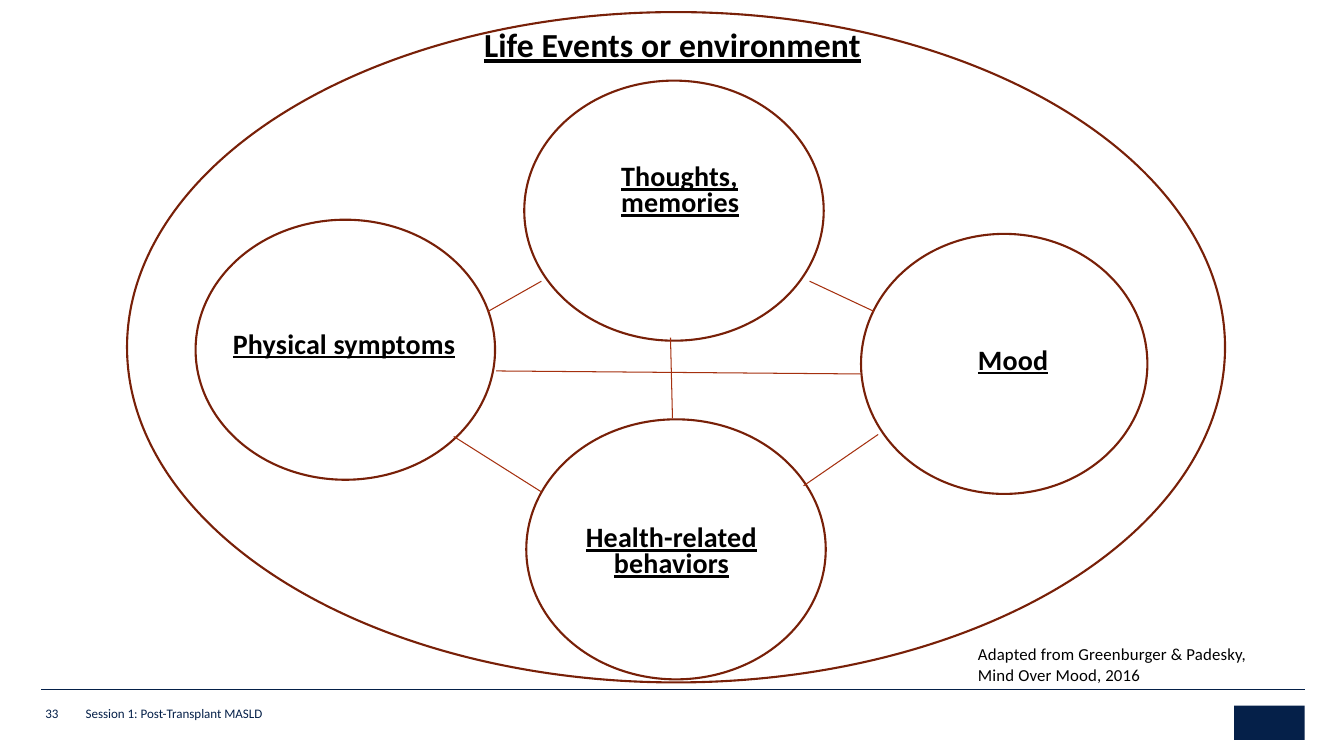
from pptx import Presentation
from pptx import util as u
from pptx.dml.color import RGBColor
from pptx.enum import shapes, text
from pptx.oxml.ns import qn
from lxml import etree

PX = 9144
COLORS = {"navy": "052049", "ring": "782008", "link": "A5300F", "ink": "000000"}
HEADING = {"size": u.Pt(20), "bold": True, "underline": True}
TITLE = {**HEADING, "size": u.Pt(24)}
SOURCE = {"size": u.Pt(12)}
FOOTER = {"size": u.Pt(9.3)}

CIRCLES = [
    ("Thoughts, memories", (394, 68, 299, 260), (97, 86, 131, 54), "LEFT"),
    ("Mood", (728, 220, 286, 260), (117, 116, 134, 27), "LEFT"),
    ("Health-related behaviors", (396, 404, 299, 260), (40, 108, 210, 54), "CENTER"),
    ("Physical symptoms", (68, 206, 299, 260), (38, 114, 231, 27), "LEFT"),
]
LINKS = [
    (359, 298, 412, 268),
    (325, 422, 412, 477),
    (542, 404, 540, 324),
    (367, 357, 728, 360),
    (678, 268, 742, 298),
    (672, 471, 746, 420),
]


def px(*lengths):
    """Turn px lengths into EMU."""
    return [u.Emu(length * PX) for length in lengths]


def color(name):
    """Look up a palette colour."""
    return RGBColor.from_string(COLORS[name])


def inside(box, part):
    """Place a part's box relative to the box that holds it."""
    left, top, width, height = part
    return box[0] + left, box[1] + top, width, height


def add_label(slide, box, lines, style, ink="ink", align="LEFT", anchor="TOP",
              leading=None, tracking=None):
    """Write one paragraph per line in a text box without margins."""
    frame = slide.shapes.add_textbox(*px(*box)).text_frame
    settings = {"margin_left": 0, "margin_top": 0, "margin_right": 0, "margin_bottom": 0,
                "word_wrap": True, "vertical_anchor": getattr(text.MSO_ANCHOR, anchor)}
    for key, value in settings.items():
        setattr(frame, key, value)
    for index, line in enumerate(lines):
        paragraph = frame.add_paragraph() if index else frame.paragraphs[0]
        paragraph.alignment = getattr(text.PP_ALIGN, align)
        if leading:
            paragraph.line_spacing = u.Pt(leading)
        run = paragraph.add_run()
        run.text = line
        for key, value in {"name": "Calibri", **style}.items():
            setattr(run.font, key, value)
        run.font.color.rgb = color(ink)
        if tracking:
            run._r.get_or_add_rPr().set("spc", str(tracking))


def add_line(slide, origin, ends, name, weight):
    """Draw a straight line between two points given from an origin."""
    left, top = origin[:2]
    x1, y1, x2, y2 = ends
    line = slide.shapes.add_connector(
        shapes.MSO_CONNECTOR.STRAIGHT, *px(left + x1, top + y1, left + x2, top + y2))
    line.line.color.rgb = color(name)
    line.line.width = u.Pt(weight)
    etree.SubElement(line._element.spPr, qn("a:effectLst"))


def add_ring(slide, box):
    """Draw an unfilled ellipse whose outer edge touches the box."""
    left, top, width, height = box
    ring = slide.shapes.add_shape(
        shapes.MSO_SHAPE.OVAL, *px(left + 1, top + 1, width - 2, height - 2))
    ring.shadow.inherit = False
    ring.fill.background()
    ring.line.color.rgb = color("ring")
    ring.line.width = u.Pt(1.5)


def add_footer(slide, box):
    """Place the rule, page number, session name and emblem block."""
    add_line(slide, box, (0, 0, box[2], 0), "navy", 0.25)
    for words, place in (("Session 1: Post-Transplant MASLD", (44, 17, 625, 14)),
                         ("33", (4, 15, 36, 16))):
        add_label(slide, inside(box, place), [words], FOOTER, "navy", anchor="BOTTOM")
    emblem = slide.shapes.add_shape(
        shapes.MSO_SHAPE.RECTANGLE, *px(*inside(box, (1183, 16, 70, 34))))
    emblem.shadow.inherit = False
    emblem.fill.solid()
    emblem.fill.fore_color.rgb = color("navy")
    emblem.line.fill.background()


def add_life_map(slide, box):
    """Place the linked circles inside the environment ellipse."""
    for words, circle, label, align in CIRCLES:
        circle_box = inside(box, circle)
        add_ring(slide, circle_box)
        add_label(slide, inside(circle_box, label), [words], HEADING,
                  align=align, leading=18.6, tracking=10)
    for ends in LINKS:
        add_line(slide, box, ends, "link", 0.75)
    add_ring(slide, box)
    add_label(slide, inside(box, (343, 27, 398, 29)), ["Life Events or environment"],
              TITLE, align="CENTER", leading=18.6, tracking=10)


def add_citation(slide, box):
    """Place the credit for the model."""
    add_label(slide, box, ["Adapted from Greenburger & Padesky,", "Mind Over Mood, 2016"],
              SOURCE, leading=14.4, tracking=10)


def main():
    """Build and save the slide."""
    deck = Presentation()
    deck.slide_width, deck.slide_height = px(1333, 750)
    slide = deck.slides.add_slide(deck.slide_layouts[6])
    add_footer(slide, (41, 684, 1253, 50))
    add_life_map(slide, (125, 11, 1091, 667))
    add_citation(slide, (970, 639, 350, 39))
    deck.save("out.pptx")


if __name__ == "__main__":
    main()
